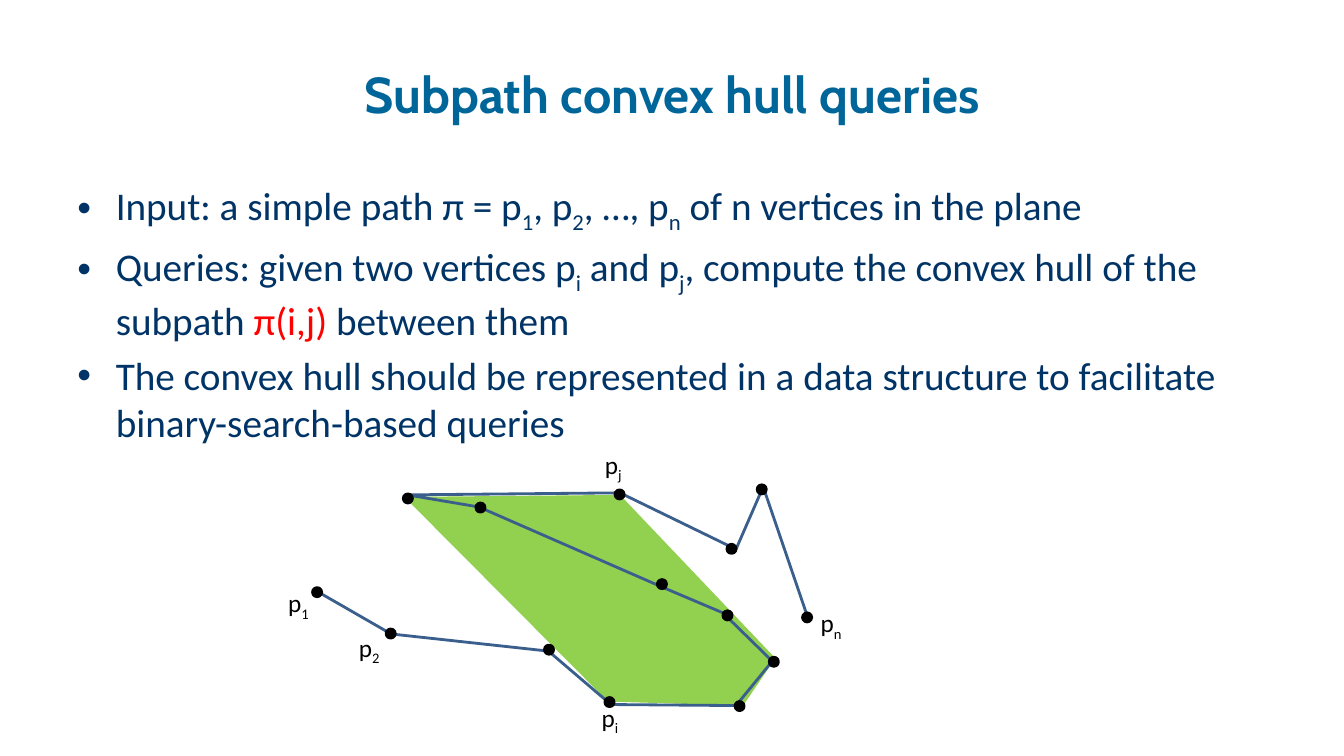
from lxml import etree
from pptx import Presentation
from pptx.dml.color import RGBColor
from pptx.enum.shapes import MSO_SHAPE
from pptx.enum.text import MSO_ANCHOR, PP_ALIGN
from pptx.oxml.ns import qn
from pptx.util import Inches, Pt

OVAL = MSO_SHAPE.OVAL
TOP, MIDDLE = MSO_ANCHOR.TOP, MSO_ANCHOR.MIDDLE
CENTER = PP_ALIGN.CENTER

TITLE_BLUE, TEXT_BLUE, RED = "006699", "003366", "FF0000"
HULL_GREEN, PATH_BLUE, BLACK = "92D050", "3A5F8C", "000000"

BULLETS = [
    [("Input: a simple path π = p", {}), ("1", {"sub": True}), (", p", {}),
     ("2", {"sub": True}), (", …, p", {}), ("n", {"sub": True}),
     (" of n vertices in the plane", {})],
    [("Queries: given two vertices p", {}), ("i", {"sub": True}),
     (" and p", {}), ("j", {"sub": True}),
     (", compute the convex hull of the subpath ", {}),
     ("π(i,j)", {"color": RED}), (" between them", {})],
    [("The convex hull should be represented in a data structure to "
      "facilitate binary-search-based queries", {})],
]

HULL = [(4.03, 2.96), (5.37, 3), (5.69, 2.53), (4.15, 0.91), (2.01, 0.93)]
PATH = [(1.15, 1.87), (1.88, 2.29), (3.44, 2.46), (4.06, 2.99), (5.3, 3),
        (5.66, 2.56), (5.17, 2.08), (4.58, 1.83), (2.75, 1.03), (2.04, 0.91),
        (4.15, 0.89), (5.3, 1.45), (5.57, 0.83), (6.02, 2.15)]
DOT_SIZE = 0.09
DOTS = [(1.1, 1.83), (1.83, 2.24), (3.4, 2.4), (4, 2.92), (5.29, 2.96),
        (5.63, 2.52), (5.17, 2.06), (4.52, 1.75), (2.72, 0.99), (2, 0.9),
        (4.1, 0.86), (5.21, 1.4), (5.51, 0.81), (5.96, 2.08)]
LABELS = [("1", 0.76, 1.78), ("2", 1.46, 2.22), ("n", 6.04, 1.98),
          ("i", 3.87, 2.92), ("j", 3.9, 0.41)]


def rgb(color):
    """Turn a hex string into a colour."""
    return RGBColor.from_string(color)


def add_span(para, text, size=28, color=TEXT_BLUE, font="Calibri", bold=False,
             sub=False, spacing=None):
    """Append formatted text to a paragraph."""
    span = para.add_run()
    span.text = text
    span.font.size = Pt(size)
    span.font.name = font
    span.font.bold = bold
    span.font.color.rgb = rgb(color)
    properties = span._r.get_or_add_rPr()
    if sub:
        properties.set("baseline", "-25000")
    if spacing:
        properties.set("spc", str(round(spacing * 100)))


def add_box(page, left, top, width, height, wrap=True, anchor=TOP):
    """Add a text box and return its text frame."""
    box = page.shapes.add_textbox(Inches(left), Inches(top),
                                  Inches(width), Inches(height))
    frame = box.text_frame
    frame.word_wrap = wrap
    frame.vertical_anchor = anchor
    return frame


def add_bullet(para, indent):
    """Give a paragraph a hanging round bullet."""
    properties = para._p.get_or_add_pPr()
    properties.set("marL", str(Inches(indent)))
    properties.set("indent", str(-Inches(indent)))
    etree.SubElement(properties, qn("a:buFont")).set("typeface", "Arial")
    etree.SubElement(properties, qn("a:buChar")).set("char", "•")


def style_shape(shape, fill=None, line=None):
    """Set the fill and outline of a shape, leaving out what is not given."""
    shape.shadow.inherit = False
    if fill:
        shape.fill.solid()
        shape.fill.fore_color.rgb = rgb(fill)
    else:
        shape.fill.background()
    if line:
        shape.line.color.rgb = rgb(line)
        shape.line.width = Pt(2)
    else:
        shape.line.fill.background()


def add_outline(page, left, top, points, close, **style):
    """Draw a freeform through points measured from a corner."""
    corners = [(Inches(left + x), Inches(top + y)) for x, y in points]
    builder = page.shapes.build_freeform(*corners[0])
    builder.add_line_segments(corners[1:], close=close)
    style_shape(builder.convert_to_shape(), **style)


def add_title(page, left, top, width, height):
    """Write the centred heading."""
    para = add_box(page, left, top, width, height, anchor=MIDDLE).paragraphs[0]
    para.alignment = CENTER
    add_span(para, "Subpath convex hull queries", size=36, color=TITLE_BLUE,
             font="Cabin", bold=True, spacing=0.1)


def add_body(page, left, top, width, height):
    """Write the bulleted problem statement."""
    frame = add_box(page, left, top, width, height)
    for index, pieces in enumerate(BULLETS):
        para = frame.add_paragraph() if index else frame.paragraphs[0]
        para.space_before = Pt(5.6)
        add_bullet(para, 0.38)
        for text, style in pieces:
            add_span(para, text, **style)


def add_diagram(page, left, top):
    """Draw the hull, the path over it, its vertices and their labels."""
    add_outline(page, left, top, HULL, True, fill=HULL_GREEN)
    add_outline(page, left, top, PATH, False, line=PATH_BLUE)
    for x, y in DOTS:
        dot = page.shapes.add_shape(OVAL, Inches(left + x), Inches(top + y),
                                    Inches(DOT_SIZE), Inches(DOT_SIZE))
        style_shape(dot, fill=BLACK, line=BLACK)
    for index, x, y in LABELS:
        width = 0.37 if index in "ij" else 0.42
        frame = add_box(page, left + x, top + y, width, 0.4, wrap=False)
        para = frame.paragraphs[0]
        add_span(para, "p", size=18, color=BLACK)
        add_span(para, index, size=18, color=BLACK, sub=True)


def main():
    """Build and save the slide."""
    deck = Presentation()
    deck.slide_width, deck.slide_height = Inches(13.33), Inches(7.5)
    page = deck.slides.add_slide(deck.slide_layouts[6])
    add_title(page, 0.67, 0.3, 12, 1.25)
    add_body(page, 0.67, 1.75, 12, 3.04)
    add_diagram(page, 2, 4)
    deck.save("out.pptx")


if __name__ == "__main__":
    main()
